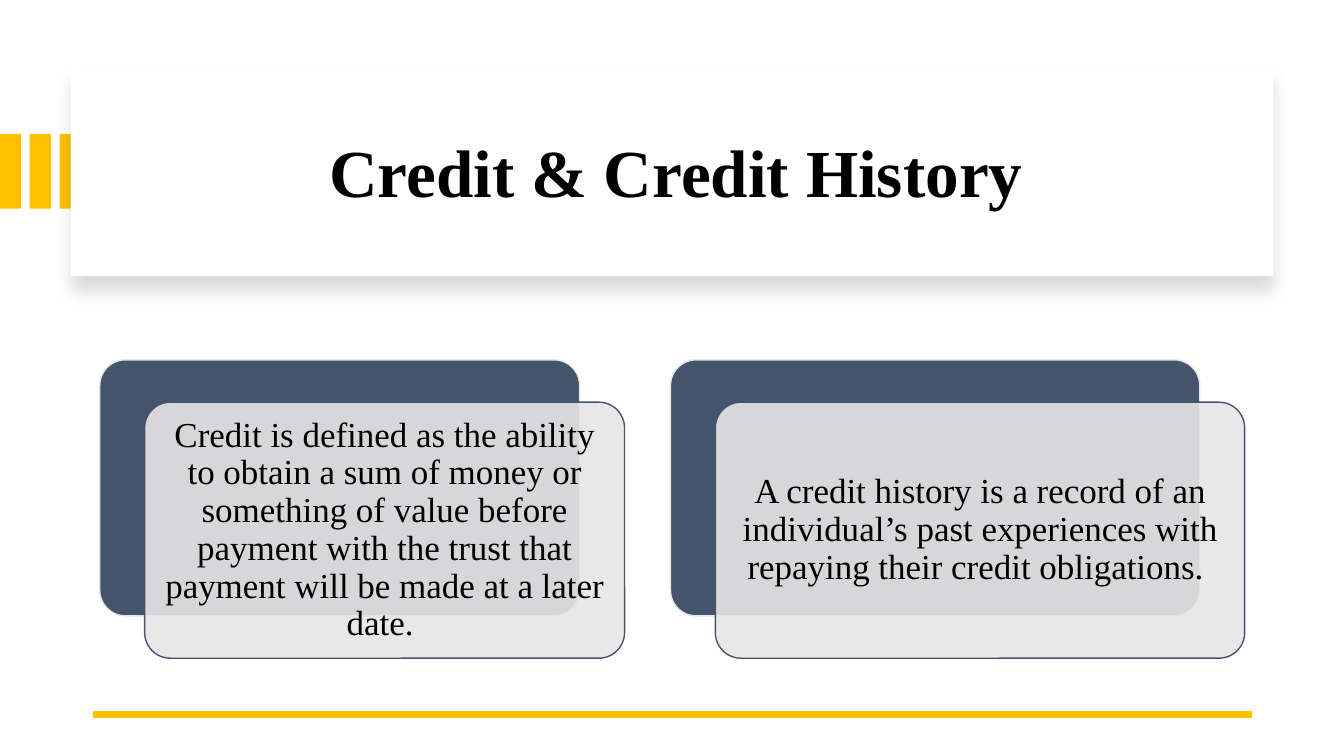
from lxml import etree
from pptx import Presentation
from pptx.dml.color import RGBColor
from pptx.enum.shapes import MSO_CONNECTOR, MSO_SHAPE
from pptx.enum.text import MSO_ANCHOR, PP_ALIGN
from pptx.oxml.ns import qn
from pptx.util import Inches, Pt

RECT = MSO_SHAPE.RECTANGLE
ROUNDED = MSO_SHAPE.ROUNDED_RECTANGLE
STRAIGHT = MSO_CONNECTOR.STRAIGHT
MIDDLE = MSO_ANCHOR.MIDDLE
CENTER = PP_ALIGN.CENTER

WIDTH, HEIGHT = 13.33, 7.5
GOLD, SLATE, PALE, WHITE, BLACK = "FFC000", "44546A", "E7E6E6", "FFFFFF", "000000"

# Striped accent and card measures, in inches
STRIPE_STEP, STRIPE_WIDTH, STRIPE_TOP, STRIPE_HEIGHT = 0.295, 0.21, 1.33, 0.74
CARD_TOP, CARD_HEIGHT = 3.57, 2.54
CARD_SHIFT_X, CARD_SHIFT_Y = 0.445, 0.42

TITLE_FONT = {"name": "Times New Roman", "size": Pt(48), "bold": True}
CARD_FONT = {"name": "Times New Roman", "size": Pt(25), "bold": False}

# Left edge, width and wording of each card
CARDS = [
    (0.99, 4.76, "Credit is defined as the ability to obtain a sum of money or "
                 "something of value before payment with the trust that payment "
                 "will be made at a later date. "),
    (6.65, 5.25, "A credit history is a record of an individual’s past "
                 "experiences with repaying their credit obligations. "),
]


def color(value):
    return RGBColor.from_string(value)


def add_block(page, preset, left, top, width, height, fill, line=None):
    block = page.shapes.add_shape(
        preset, Inches(left), Inches(top), Inches(width), Inches(height))
    block.shadow.inherit = False
    block.fill.solid()
    block.fill.fore_color.rgb = color(fill)
    if line:
        block.line.color.rgb = color(line)
        block.line.width = Pt(1)
    else:
        block.line.fill.background()
    if preset == ROUNDED:
        block.adjustments[0] = 0.1
    return block


def add_alpha(color_element, percent):
    alpha = etree.SubElement(color_element, qn("a:alpha"))
    alpha.set("val", str(percent * 1000))


def add_drop_shadow(block, opacity, blur, distance):
    effects = block._element.spPr.find(qn("a:effectLst"))
    shadow = etree.SubElement(effects, qn("a:outerShdw"))
    values = {"blurRad": Pt(blur), "dist": Pt(distance), "dir": 90 * 60000,
              "algn": "t", "rotWithShape": 0}
    for name, value in values.items():
        shadow.set(name, str(value))
    shade = etree.SubElement(shadow, qn("a:srgbClr"), val=BLACK)
    add_alpha(shade, opacity)


def write_text(box, text, font, inset):
    frame = box.text_frame
    frame.word_wrap = True
    frame.vertical_anchor = MIDDLE
    for side in ("left", "top", "right", "bottom"):
        setattr(frame, f"margin_{side}", Inches(inset))
    para = frame.paragraphs[0]
    para.alignment = CENTER
    para.line_spacing = 0.9
    span = para.add_run()
    span.text = text
    for name, value in font.items():
        setattr(span.font, name, value)
    span.font.color.rgb = color(BLACK)


def add_title(page, text):
    # Stripes run in from the left edge, under the title panel
    for index in range(3):
        add_block(page, RECT, index * STRIPE_STEP, STRIPE_TOP,
                  STRIPE_WIDTH, STRIPE_HEIGHT, GOLD)
    panel = add_block(page, RECT, 0.7, 0.67, 11.93, 2.07, WHITE)
    add_drop_shadow(panel, opacity=15, blur=11, distance=10)
    box = page.shapes.add_textbox(
        Inches(1.14), Inches(0.89), Inches(11.13), Inches(1.7))
    write_text(box, text, TITLE_FONT, 0.05)


def add_card(page, left, width, text):
    add_block(page, ROUNDED, left, CARD_TOP, width, CARD_HEIGHT, SLATE, PALE)
    front = add_block(page, ROUNDED, left + CARD_SHIFT_X, CARD_TOP + CARD_SHIFT_Y,
                      width, CARD_HEIGHT, PALE, SLATE)
    add_alpha(front._element.spPr.find(qn("a:solidFill"))[0], 90)
    write_text(front, text, CARD_FONT, 0.1)


def add_rule(page, start, end, top):
    rule = page.shapes.add_connector(
        STRAIGHT, Inches(start), Inches(top), Inches(end), Inches(top))
    rule.line.color.rgb = color(GOLD)
    rule.line.width = Pt(4.5)
    etree.SubElement(rule._element.spPr, qn("a:effectLst"))


def main():
    deck = Presentation()
    deck.slide_width, deck.slide_height = Inches(WIDTH), Inches(HEIGHT)
    page = deck.slides.add_slide(deck.slide_layouts[6])

    add_title(page, "Credit & Credit History")
    add_rule(page, 12.42, 0.92, 7.09)
    for left, width, text in CARDS:
        add_card(page, left, width, text)

    deck.save("out.pptx")


if __name__ == "__main__":
    main()
